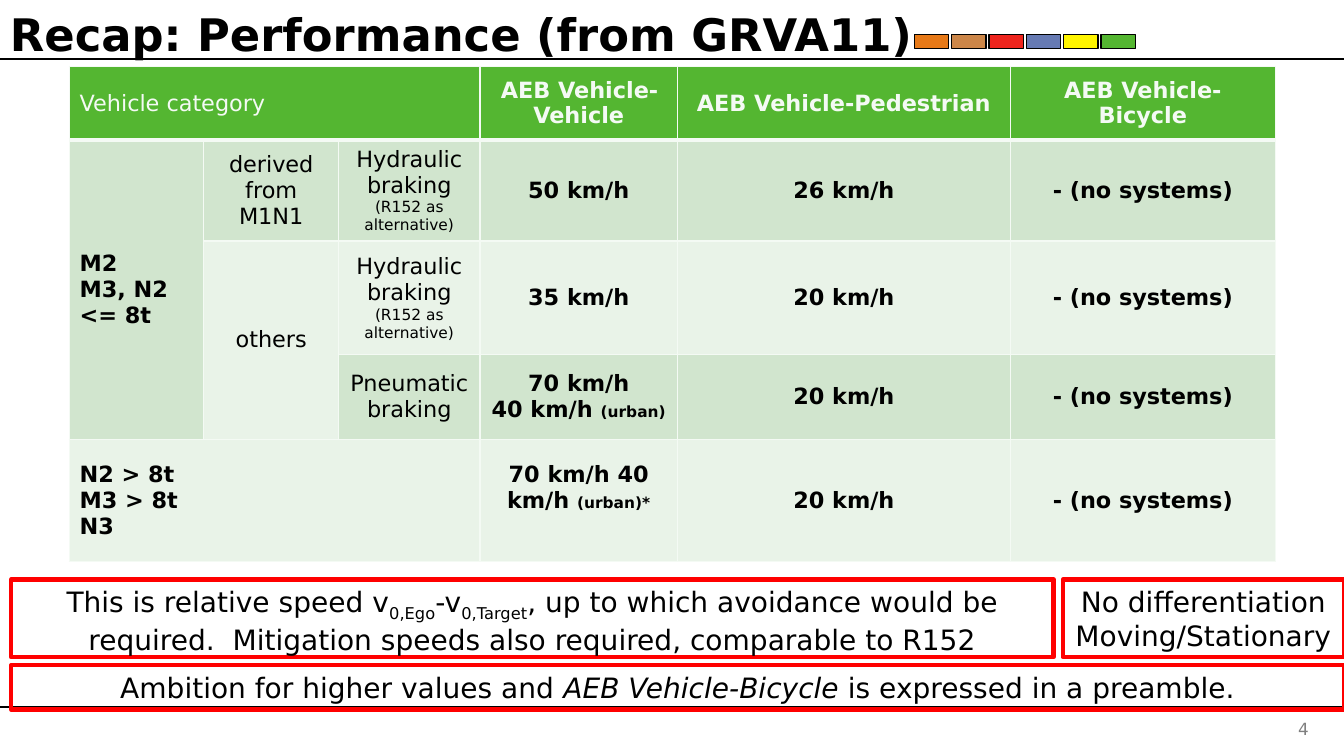
from dataclasses import dataclass

import pptx
import pptx.dml.color
import pptx.enum.shapes
import pptx.enum.text
import pptx.oxml
import pptx.oxml.ns
import pptx.util

Inches = pptx.util.Inches
Pt = pptx.util.Pt
Align = pptx.enum.text.PP_ALIGN
Anchor = pptx.enum.text.MSO_ANCHOR
RECTANGLE = pptx.enum.shapes.MSO_SHAPE.RECTANGLE
STRAIGHT = pptx.enum.shapes.MSO_CONNECTOR.STRAIGHT


@dataclass(frozen=True)
class Theme:
    font: str = "DejaVu Sans"
    black: str = "000000"
    gray: str = "808080"
    red: str = "FF0000"
    header: str = "54B631"
    header_text: str = "F4FAF4"
    bands: tuple = ("E9F3E8", "D1E5CE")
    swatches: tuple = ("E77917", "CC8648", "EE251D", "667AB3", "FFF500", "54B631")
    title_size: int = 32
    note_size: int = 20
    table_size: int = 16
    number_size: int = 12
    small_size: int = 11


THEME = Theme()
WIDTH, HEIGHT = 13.33, 7.5
RULES = (0.59, 7.01)
SWATCH_LEFT, SWATCH_TOP, SWATCH_PITCH = 9.07, 0.34, 0.37
SWATCH_SIZE = (0.34, 0.14)
TABLE_LEFT, TABLE_TOP = 0.69, 0.66
COLUMNS = (1.33, 1.34, 1.4, 1.96, 3.3, 2.63)
ROWS = (0.73, 0.97, 1.13, 0.84, 1.21)
BLANK_LINE = 0.31

TITLE = [[("Recap: Performance (from GRVA11)", "bold")]]
NUMBER = [[("4", "")]]
HYDRAULIC = [[("Hydraulic braking", "")], [("(R152 as alternative)", "small")]]
NO_SYSTEMS = [[("- (no systems)", "bold")]]
SLOW = [[("20 km/h", "bold")]]

CATEGORIES = [
    (0, 0, 1, 3, Align.LEFT, [[("Vehicle category", "")]]),
    (1, 0, 3, 1, Align.LEFT, [[("M2", "bold")], [("M3, N2 <= 8t", "bold")]]),
    (1, 1, 1, 1, Align.CENTER, [[("derived from M1N1", "")]]),
    (1, 2, 1, 1, Align.CENTER, HYDRAULIC),
    (2, 1, 2, 1, Align.CENTER, [[("others", "")]]),
    (2, 2, 1, 1, Align.CENTER, HYDRAULIC),
    (3, 2, 1, 1, Align.CENTER, [[("Pneumatic braking", "")]]),
    (4, 0, 1, 3, Align.LEFT,
     [[("N2 > 8t", "bold")], [("M3 > 8t", "bold")], [("N3", "bold")]]),
]
SPEEDS = [
    [[[("AEB Vehicle-Vehicle", "bold")]], [[("AEB Vehicle-Pedestrian", "bold")]],
     [[("AEB Vehicle-Bicycle", "bold")]]],
    [[[("50 km/h", "bold")]], [[("26 km/h", "bold")]], NO_SYSTEMS],
    [[[("35 km/h", "bold")]], SLOW, NO_SYSTEMS],
    [[[("70 km/h", "bold")], [("40 km/h ", "bold"), ("(urban)", "bold small")]],
     SLOW, NO_SYSTEMS],
    [[[("70 km/h 40 km/h ", "bold"), ("(urban)*", "bold small")]], SLOW, NO_SYSTEMS],
]
NOTES = [
    ((10.54, 5.75, 2.79, 0.77), False, [[("No differentiation\vMoving/Stationary", "")]]),
    ((0.11, 5.75, 10.34, 0.77), True, [[
        ("This is relative speed v", ""), ("0,Ego", "sub"), ("-v", ""), ("0,Target", "sub"),
        (", up to which avoidance would be required.  Mitigation speeds also required,"
         " comparable to R152", "")]]),
    ((0.11, 6.6, 13.22, 0.44), True, [[
        ("Ambition for higher values and ", ""), ("AEB Vehicle-Bicycle ", "italic"),
        ("is expressed in a preamble.", "")]]),
]


def rgb(value):
    return pptx.dml.color.RGBColor.from_string(value)


def write(text_frame, paragraphs, size, color, align):
    for index, runs in enumerate(paragraphs):
        paragraph = text_frame.paragraphs[0] if index == 0 else text_frame.add_paragraph()
        if len(runs) == 1:
            paragraph.text = runs[0][0]
        else:
            for text, _ in runs:
                paragraph.add_run().text = text
        paragraph.alignment = align
        styles = [style.split() for _, style in runs]
        for position, run in enumerate(paragraph.runs):
            style = styles[min(position, len(styles) - 1)]
            run.font.name = THEME.font
            run.font.size = Pt(THEME.small_size if "small" in style else size)
            run.font.bold = "bold" in style
            run.font.italic = "italic" in style
            run.font.color.rgb = rgb(color)
            if "sub" in style:
                run._r.get_or_add_rPr().set("baseline", "-25000")


def add_text(slide, box, paragraphs, size, color, align):
    shape = slide.shapes.add_textbox(*map(Inches, box))
    shape.text_frame.word_wrap = True
    shape.text_frame.vertical_anchor = Anchor.MIDDLE
    write(shape.text_frame, paragraphs, size, color, align)


def add_rectangle(slide, box, fill, line, line_width):
    shape = slide.shapes.add_shape(RECTANGLE, *map(Inches, box))
    shape.shadow.inherit = False
    if fill:
        shape.fill.solid()
        shape.fill.fore_color.rgb = rgb(fill)
    else:
        shape.fill.background()
    shape.line.color.rgb = rgb(line)
    shape.line.width = Pt(line_width)
    return shape


def add_rule(slide, top):
    rule = slide.shapes.add_connector(STRAIGHT, 0, Inches(top), Inches(WIDTH), Inches(top))
    rule.line.color.rgb = rgb(THEME.black)
    rule.line.width = Pt(1.5)
    rule._element.spPr.append(pptx.oxml.parse_xml(
        f'<a:effectLst {pptx.oxml.ns.nsdecls("a")}/>'))


def style_cell(cell, row):
    cell.fill.solid()
    cell.fill.fore_color.rgb = rgb(THEME.bands[row % 2] if row else THEME.header)
    cell.vertical_anchor = Anchor.MIDDLE
    properties = cell._tc.get_or_add_tcPr()
    for index, side in enumerate("LRTB"):
        width = Pt(3 if row == 0 and side == "B" else 1)
        properties.insert(index, pptx.oxml.parse_xml(
            f'<a:ln{side} {pptx.oxml.ns.nsdecls("a")} w="{width}"><a:solidFill>'
            f'<a:srgbClr val="{THEME.header_text}"/></a:solidFill></a:ln{side}>'))


def add_speed_table(slide):
    box = (TABLE_LEFT, TABLE_TOP, sum(COLUMNS), sum(ROWS))
    table = slide.shapes.add_table(len(ROWS), len(COLUMNS), *map(Inches, box)).table
    for column, width in zip(table.columns, COLUMNS):
        column.width = Inches(width)
    for row, height in enumerate(ROWS):
        table.rows[row].height = Inches(height)
        for column in range(len(COLUMNS)):
            style_cell(table.cell(row, column), row)
    first_speed = len(COLUMNS) - len(SPEEDS[0])
    speeds = [(row, first_speed + column, 1, 1, Align.CENTER, paragraphs)
              for row, cells in enumerate(SPEEDS) for column, paragraphs in enumerate(cells)]
    for row, column, height, width, align, paragraphs in CATEGORIES + speeds:
        cell = table.cell(row, column)
        if height * width > 1:
            cell.merge(table.cell(row + height - 1, column + width - 1))
        color = THEME.black if row else THEME.header_text
        write(cell.text_frame, paragraphs, THEME.table_size, color, align)
    table.cell(len(ROWS) - 1, first_speed).margin_bottom = Inches(BLANK_LINE)


def main():
    presentation = pptx.Presentation()
    presentation.slide_width = Inches(WIDTH)
    presentation.slide_height = Inches(HEIGHT)
    slide = presentation.slides.add_slide(presentation.slide_layouts[6])
    add_text(slide, (10.13, 7.09, 2.95, 0.28), NUMBER, THEME.number_size, THEME.gray, Align.RIGHT)
    for top in RULES:
        add_rule(slide, top)
    for index, color in enumerate(THEME.swatches):
        box = (SWATCH_LEFT + index * SWATCH_PITCH, SWATCH_TOP, *SWATCH_SIZE)
        add_rectangle(slide, box, color, THEME.black, 1)
    add_text(slide, (0, 0, 9.93, 0.66), TITLE, THEME.title_size, THEME.black, Align.LEFT)
    add_speed_table(slide)
    for box, wrap, paragraphs in NOTES:
        text_frame = add_rectangle(slide, box, None, THEME.red, 3).text_frame
        text_frame.word_wrap = wrap
        text_frame.auto_size = pptx.enum.text.MSO_AUTO_SIZE.SHAPE_TO_FIT_TEXT
        text_frame.vertical_anchor = Anchor.TOP
        write(text_frame, paragraphs, THEME.note_size, THEME.black, Align.CENTER)
    presentation.save("out.pptx")


if __name__ == "__main__":
    main()
